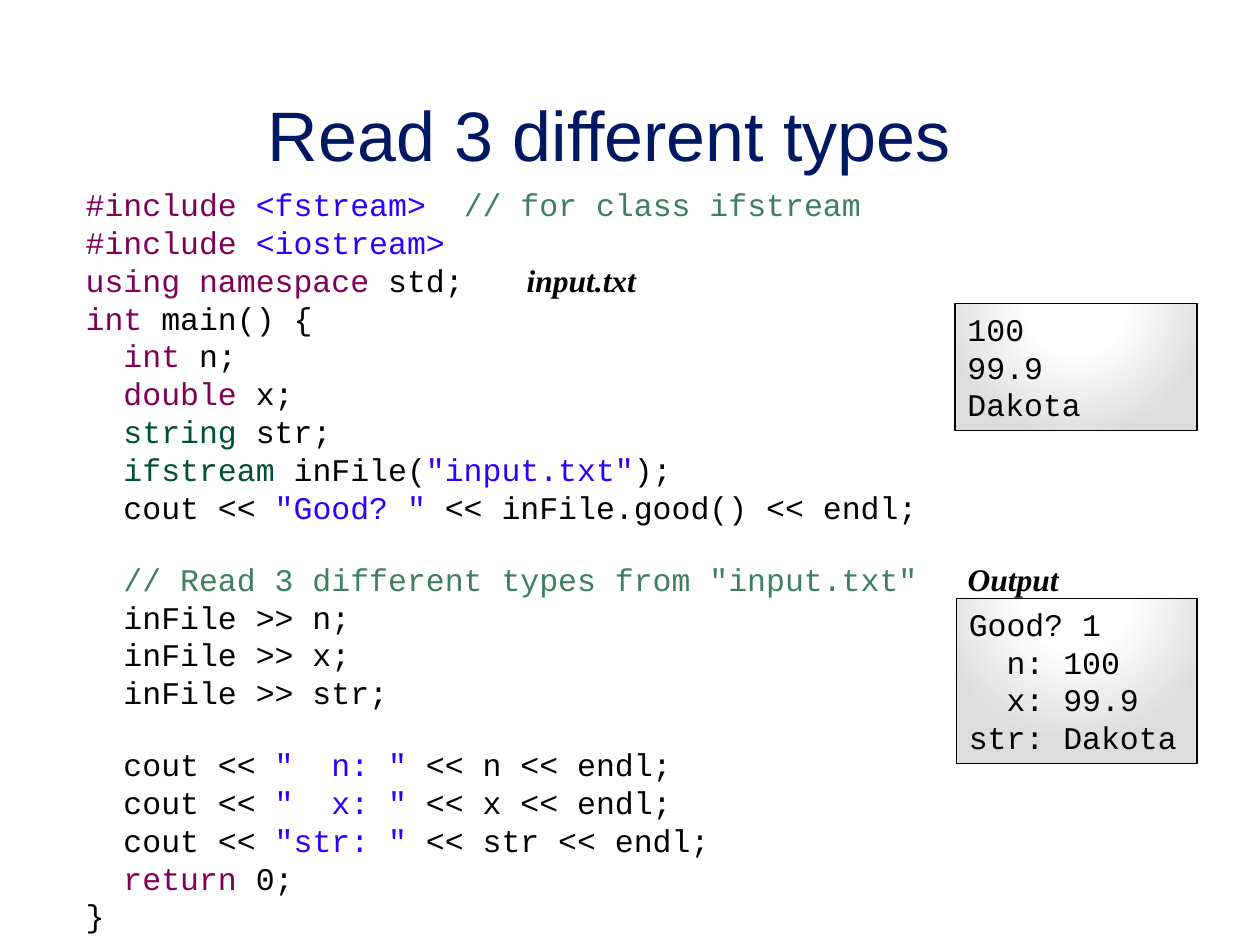
"""Build a slide on reading three types from a file, with its input and output."""
from lxml.etree import SubElement
from pptx import Presentation
from pptx.dml.color import RGBColor
from pptx.enum.shapes import MSO_SHAPE
from pptx.enum.text import MSO_ANCHOR as Anchor, MSO_AUTO_SIZE as AutoSize, PP_ALIGN as Align
from pptx.oxml.ns import qn
from pptx.util import Inches, Pt

COLORS = {
    "title": "001762", "plain": "000000", "keyword": "7F0055", "string": "2A00FF",
    "comment": "3F7F5F", "type": "005032", "label": "000000",
    "light": "FFFFFF", "shade": "DDDDDD",
}
CODE_FONT = {"name": "Courier New", "size": Pt(18), "bold": False, "italic": False}
LABEL_FONT = {"name": "Times New Roman", "size": Pt(18), "bold": True, "italic": True}
TITLE_FONT = {"name": "Arial", "size": Pt(40), "bold": False}
LABEL_TAB = Inches(7.05)
SECTION_GAP = Pt(19.6)


def print_line(variable, prompt):
    """Return the code line that prints a variable after its prompt."""
    return [("  cout << ", "plain"), (f'"{prompt}"', "string"),
            (f" << {variable} << endl;", "plain")]


def read_line(variable):
    """Return the code line that reads a variable from the file."""
    return [(f"  inFile >> {variable};", "plain")]


SECTIONS = [
    [
        [("#include ", "keyword"), ("<fstream>  ", "string"),
         ("// for class ifstream", "comment")],
        [("#include ", "keyword"), ("<iostream>", "string")],
        [("using namespace ", "keyword"), ("std;", "plain"), ("\tinput.txt", "label")],
        [("int", "keyword"), (" main() {", "plain")],
        [("  int ", "keyword"), ("n;", "plain")],
        [("  double", "keyword"), (" x;", "plain")],
        [("  string ", "type"), ("str;", "plain")],
        [("  ifstream ", "type"), ("inFile(", "plain"),
         ('"input.txt"', "string"), (");", "plain")],
        print_line("inFile.good()", "Good? "),
    ],
    [
        [('  // Read 3 different types from "input.txt"', "comment"), ("\tOutput", "label")],
        *[read_line(variable) for variable in ("n", "x", "str")],
    ],
    [
        *[print_line(name, f"{name:>3}: ") for name in ("n", "x", "str")],
        [("  return", "keyword"), (" 0;", "plain")],
        [("}", "plain")],
    ],
]


def set_values(target, values):
    """Set each named attribute of the target."""
    for name, value in values.items():
        setattr(target, name, value)


def place(part, left, top, width, height):
    """Move and size a placeholder, in inches."""
    set_values(part, {"left": Inches(left), "top": Inches(top),
                      "width": Inches(width), "height": Inches(height)})


def add_words(paragraph, words, role, font_values):
    """Add one run in the colour of its role."""
    run = paragraph.add_run()
    run.text = words
    set_values(run.font, font_values)
    run.font.color.rgb = RGBColor.from_string(COLORS[role])


def next_paragraph(frame, is_first):
    """Return the paragraph that holds the next line."""
    return frame.paragraphs[0] if is_first else frame.add_paragraph()


def fill_title(title):
    """Write the heading."""
    place(title, 0.17, 0.38, 9.33, 1.46)
    frame = title.text_frame
    set_values(frame, {"auto_size": AutoSize.NONE, "vertical_anchor": Anchor.MIDDLE})
    heading = frame.paragraphs[0]
    set_values(heading, {"alignment": Align.CENTER, "line_spacing": 0.87})
    add_words(heading, "Read 3 different types", "title", TITLE_FONT)


def format_code_line(line, gap):
    """Clear the list look of a line and give it the tab stop of the labels."""
    set_values(line, {"alignment": Align.LEFT, "space_before": gap})
    properties = line._p.get_or_add_pPr()
    properties.set("marL", "0")
    properties.set("indent", "0")
    SubElement(properties, qn("a:buNone"))
    tabs = SubElement(properties, qn("a:tabLst"))
    SubElement(tabs, qn("a:tab"), pos=str(LABEL_TAB), algn="l")


def fill_code(body):
    """Write the program, section by section."""
    place(body, 0.58, 1.42, 8.75, 5.33)
    frame = body.text_frame
    set_values(frame, {"auto_size": AutoSize.NONE, "vertical_anchor": Anchor.TOP})
    for section_index, section in enumerate(SECTIONS):
        for line_index, tokens in enumerate(section):
            line = next_paragraph(frame, section_index == line_index == 0)
            starts_section = section_index > 0 and line_index == 0
            format_code_line(line, SECTION_GAP if starts_section else Pt(0))
            for words, role in tokens:
                add_words(line, words, role, LABEL_FONT if role == "label" else CODE_FONT)


def shade_from_top(panel):
    """Fill a panel with a round gradient that is lightest above its top edge."""
    panel.fill.gradient()
    gradient = panel._element.spPr.find(qn("a:gradFill"))
    for child in list(gradient):
        gradient.remove(child)
    stops = SubElement(gradient, qn("a:gsLst"))
    for percent, tone in ((0, "light"), (35, "light"), (100, "shade")):
        stop = SubElement(stops, qn("a:gs"), pos=str(percent * 1000))
        SubElement(stop, qn("a:srgbClr"), val=COLORS[tone])
    circle = SubElement(gradient, qn("a:path"), path="circle")
    SubElement(circle, qn("a:fillToRect"), l="50000", t="-80000", r="50000", b="180000")


def add_panel(slide, left, top, width, height, lines):
    """Add a shaded box that shows the text of a file or console."""
    panel = slide.shapes.add_shape(
        MSO_SHAPE.RECTANGLE, Inches(left), Inches(top), Inches(width), Inches(height))
    panel.shadow.inherit = False
    shade_from_top(panel)
    panel.line.color.rgb = RGBColor.from_string(COLORS["plain"])
    panel.line.width = Pt(0.75)
    frame = panel.text_frame
    set_values(frame, {"word_wrap": True, "auto_size": AutoSize.SHAPE_TO_FIT_TEXT,
                       "vertical_anchor": Anchor.TOP})
    for index, words in enumerate(lines):
        line = next_paragraph(frame, index == 0)
        line.alignment = Align.LEFT
        add_words(line, words, "plain", CODE_FONT)


def main():
    """Build and save the slide."""
    deck = Presentation()
    set_values(deck, {"slide_width": Inches(10), "slide_height": Inches(7.5)})
    slide = deck.slides.add_slide(deck.slide_layouts[1])
    fill_title(slide.shapes.title)
    fill_code(slide.placeholders[1])
    add_panel(slide, 7.58, 2.41, 1.92, 1.01, ["100", "99.9", "Dakota"])
    add_panel(slide, 7.59, 4.75, 1.91, 1.31,
              ["Good? 1", "  n: 100", "  x: 99.9", "str: Dakota"])
    deck.save("out.pptx")


if __name__ == "__main__":
    main()
